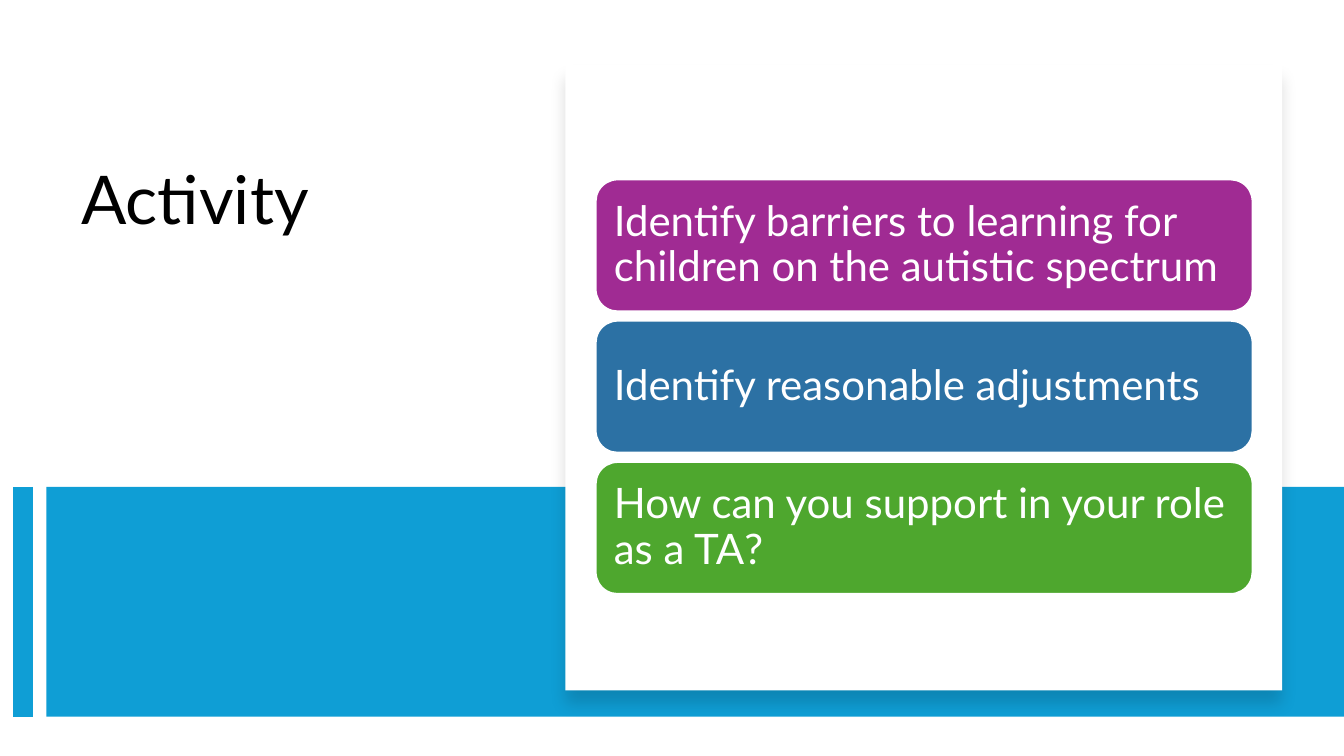
from dataclasses import dataclass

from lxml.etree import SubElement
from pptx import Presentation
from pptx.dml.color import RGBColor
from pptx.enum.shapes import MSO_CONNECTOR as Link, MSO_SHAPE as Form
from pptx.enum.text import MSO_ANCHOR as Anchor, PP_ALIGN as Align
from pptx.oxml.ns import qn
from pptx.util import Cm, Pt

HUES = {
    "black": "000000",
    "white": "FFFFFF",
    "band": "0F9ED5",
    "purple": "A02B93",
    "blue": "2C71A4",
    "green": "4EA72E",
}
FONT = "Lato"


@dataclass
class Box:
    left: float
    top: float
    width: float
    height: float

    def place(self) -> tuple:
        return Cm(self.left), Cm(self.top), Cm(self.width), Cm(self.height)


@dataclass
class Card:
    text: str
    hue: str


CARDS = [
    Card("Identify barriers to learning for children on the autistic spectrum", "purple"),
    Card("Identify reasonable adjustments", "blue"),
    Card("How can you support in your role as a TA?", "green"),
]
BAND = Box(1.17, 12.27, 32.7, 5.79)
PANEL = Box(14.25, 1.63, 18.06, 15.77)
FIRST = Box(15.01, 4.52, 16.56, 3.33)
STEP = 3.56


def tint(name: str) -> RGBColor:
    return RGBColor.from_string(HUES[name])


def block(slide, form, box: Box, hue: str):
    shape = slide.shapes.add_shape(form, *box.place())
    shape.shadow.inherit = False
    shape.fill.solid()
    shape.fill.fore_color.rgb = tint(hue)
    shape.line.fill.background()
    return shape


def write(frame, text: str, size: int, hue: str, anchor, inset: tuple) -> None:
    frame.word_wrap = True
    frame.vertical_anchor = anchor
    frame.margin_left = frame.margin_right = Cm(inset[0])
    frame.margin_top = frame.margin_bottom = Cm(inset[1])
    para = frame.paragraphs[0]
    para.alignment = Align.LEFT
    para.line_spacing = 0.9
    run = para.add_run()
    run.text = text
    run.font.name = FONT
    run.font.size = Pt(size)
    run.font.color.rgb = tint(hue)


def shade(shape) -> None:
    """Add a soft shadow that falls straight down."""
    effects = shape._element.spPr.find(qn("a:effectLst"))
    outer = SubElement(effects, qn("a:outerShdw"), blurRad=str(Pt(11)),
                       dist=str(Pt(10)), dir=str(90 * 60000), rotWithShape="0")
    color = SubElement(outer, qn("a:srgbClr"), val=HUES["black"])
    SubElement(color, qn("a:alpha"), val="15000")


def stripe(slide, x: float, top: float, end: float) -> None:
    line = slide.shapes.add_connector(Link.STRAIGHT, Cm(x), Cm(top), Cm(x), Cm(end))
    line.line.color.rgb = tint("band")
    line.line.width = Pt(14)
    SubElement(line._element.spPr, qn("a:effectLst"))


def main() -> None:
    deck = Presentation()
    deck.slide_width, deck.slide_height = Cm(33.87), Cm(19.05)
    slide = deck.slides.add_slide(deck.slide_layouts[6])

    # Title
    title = slide.shapes.add_textbox(*Box(1.8, 4.06, 10.54, 7.47).place())
    write(title.text_frame, "Activity", 48, "black", Anchor.TOP, (0.25, 0.13))

    # Blue band with its side stripe
    block(slide, Form.RECTANGLE, BAND, "band")
    stripe(slide, 0.58, BAND.top, BAND.top + BAND.height)

    # White panel
    shade(block(slide, Form.RECTANGLE, PANEL, "white"))

    # Task cards
    for i, card in enumerate(CARDS):
        box = Box(FIRST.left, FIRST.top + i * STEP, FIRST.width, FIRST.height)
        shape = block(slide, Form.ROUNDED_RECTANGLE, box, card.hue)
        shape.line.color.rgb = tint("white")
        shape.line.width = Pt(1.5)
        write(shape.text_frame, card.text, 30, "white", Anchor.MIDDLE, (0.3, 0.3))

    deck.save("out.pptx")


if __name__ == "__main__":
    main()
